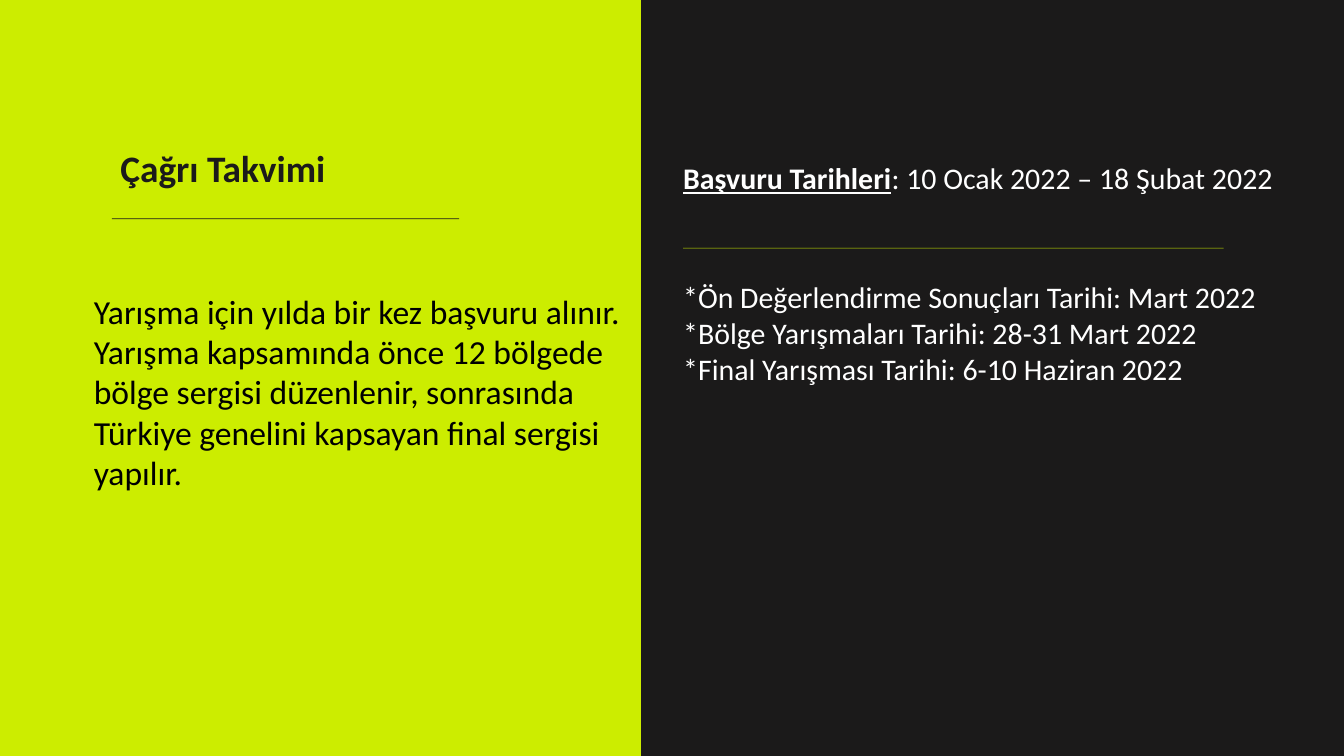
from dataclasses import dataclass

from pptx import Presentation
from pptx.dml.color import RGBColor
from pptx.enum.shapes import MSO_SHAPE
from pptx.enum.text import MSO_ANCHOR, MSO_AUTO_SIZE, PP_ALIGN
from pptx.util import Pt

RECTANGLE = MSO_SHAPE.RECTANGLE
TOP = MSO_ANCHOR.TOP
LEFT = PP_ALIGN.LEFT
NO_AUTOFIT = MSO_AUTO_SIZE.NONE

EMU_PER_PX = 9525
SLIDE_WIDTH, SLIDE_HEIGHT = 1920, 1080
PANEL_LEFT = 916
HEADING_LEFT = 160
DATES_LEFT = 976
FONT_NAME = "Calibri"
COLORS = {"lime": "CCED00", "dark": "1B1A1A", "white": "FFFFFF", "black": "000000"}


@dataclass(frozen=True)
class Box:
    left: int
    top: int
    width: int
    height: int


@dataclass(frozen=True)
class Bar:
    box: Box
    color: str


@dataclass(frozen=True)
class TextRun:
    text: str
    emphasis: bool = False


@dataclass(frozen=True)
class TextBlock:
    box: Box
    paragraphs: list[list[TextRun]]
    size: int
    color: str
    bold: bool = False
    line_points: int | None = None
    indent: int = 0


BARS = [
    Bar(Box(PANEL_LEFT, 0, SLIDE_WIDTH - PANEL_LEFT, SLIDE_HEIGHT), "dark"),
    Bar(Box(HEADING_LEFT, 312, 496, 1), "dark"),
    Bar(Box(DATES_LEFT, 354, 772, 1), "lime"),
]

HEADING = TextBlock(
    Box(HEADING_LEFT, 228, 496, 48),
    [[TextRun("Çağrı Takvimi")]],
    size=40, color="dark", bold=True, line_points=33, indent=12,
)

TEXT_BLOCKS = [
    TextBlock(
        Box(DATES_LEFT, 236, 912, 44),
        [[TextRun("Başvuru Tarihleri", emphasis=True),
          TextRun(": 10 Ocak 2022 – 18 Şubat 2022")]],
        size=32, color="white", line_points=33,
    ),
    TextBlock(
        Box(DATES_LEFT, 398, 912, 243),
        [[TextRun("*Ön Değerlendirme Sonuçları Tarihi: Mart 2022")],
         [TextRun("*Bölge Yarışmaları Tarihi: 28-31 Mart 2022")],
         [TextRun("*Final Yarışması Tarihi: 6-10 Haziran 2022")]],
        size=32, color="white",
    ),
    TextBlock(
        Box(134, 415, 772, 290),
        [[TextRun("Yarışma için yılda bir kez başvuru alınır. Yarışma kapsamında "
                  "önce 12 bölgede bölge sergisi düzenlenir, sonrasında Türkiye "
                  "genelini kapsayan final sergisi yapılır.")]],
        size=36, color="black",
    ),
]


def px(length: int) -> int:
    return length * EMU_PER_PX


def rgb(name: str) -> RGBColor:
    return RGBColor.from_string(COLORS[name])


def place(shape, box: Box) -> None:
    shape.left, shape.top = px(box.left), px(box.top)
    shape.width, shape.height = px(box.width), px(box.height)


def draw_bar(slide, bar: Bar) -> None:
    box = bar.box
    shape = slide.shapes.add_shape(
        RECTANGLE, px(box.left), px(box.top), px(box.width), px(box.height))
    shape.shadow.inherit = False
    shape.fill.solid()
    shape.fill.fore_color.rgb = rgb(bar.color)
    shape.line.fill.background()


def write_text(shape, block: TextBlock) -> None:
    """Place a text shape and fill it with the block's formatted paragraphs."""
    place(shape, block.box)
    frame = shape.text_frame
    frame.word_wrap = True
    frame.auto_size = NO_AUTOFIT
    frame.vertical_anchor = TOP
    frame.margin_left = px(block.indent)
    frame.margin_top = frame.margin_right = frame.margin_bottom = 0
    for index, runs in enumerate(block.paragraphs):
        paragraph = frame.add_paragraph() if index else frame.paragraphs[0]
        paragraph.alignment = LEFT
        if block.line_points:
            paragraph.line_spacing = Pt(block.line_points)
        font = paragraph.font
        font.name = FONT_NAME
        font.size = Pt(block.size)
        font.bold = block.bold
        font.color.rgb = rgb(block.color)
        for text_run in runs:
            run = paragraph.add_run()
            run.text = text_run.text
            if text_run.emphasis:
                run.font.bold = True
                run.font.underline = True


def main() -> None:
    presentation = Presentation()
    presentation.slide_width = px(SLIDE_WIDTH)
    presentation.slide_height = px(SLIDE_HEIGHT)
    title_only_layout = presentation.slide_layouts[5]
    slide = presentation.slides.add_slide(title_only_layout)
    slide.background.fill.solid()
    slide.background.fill.fore_color.rgb = rgb("lime")

    for bar in BARS:
        draw_bar(slide, bar)
    write_text(slide.shapes.title, HEADING)
    for block in TEXT_BLOCKS:
        write_text(slide.shapes.add_textbox(0, 0, 0, 0), block)

    presentation.save("out.pptx")


if __name__ == "__main__":
    main()
